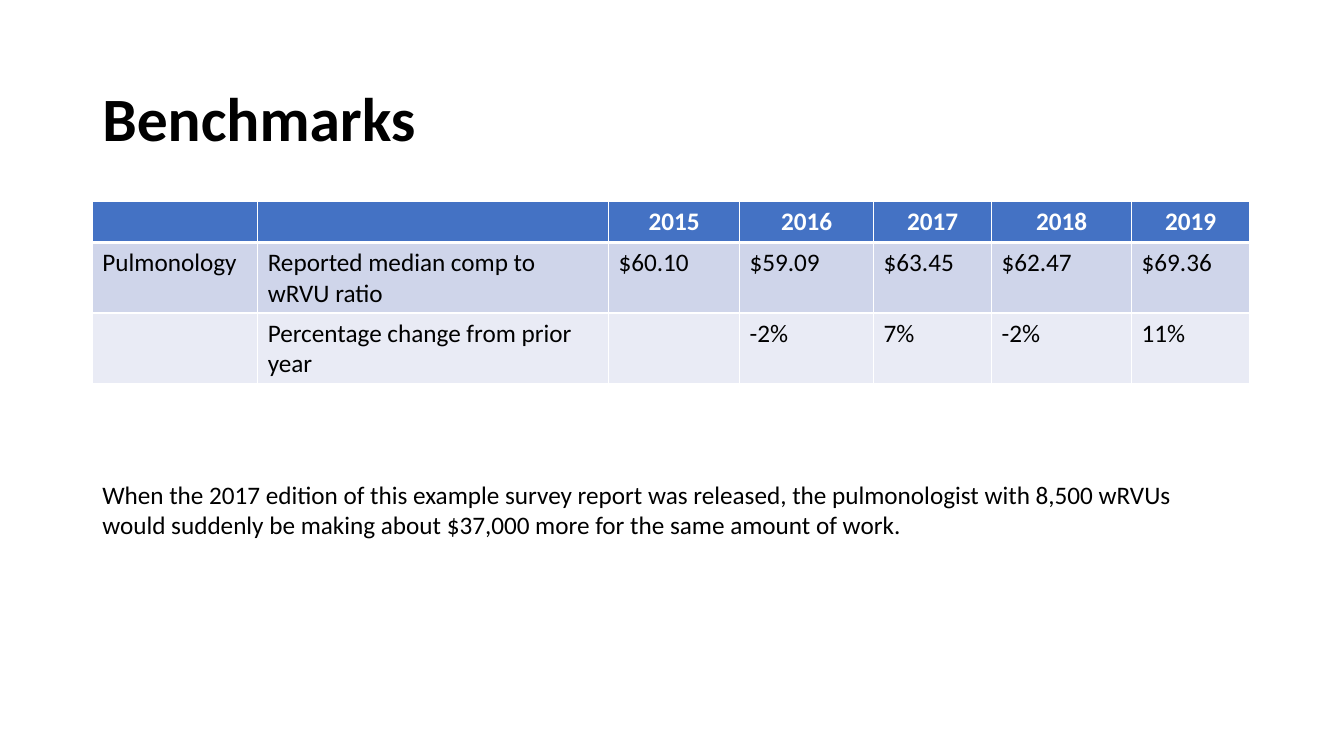
from lxml.etree import SubElement
from pptx import Presentation
from pptx.dml.color import RGBColor
from pptx.enum.text import MSO_ANCHOR, PP_ALIGN
from pptx.oxml.ns import qn
from pptx.util import Pt

TITLE = "Benchmarks"
NOTE = ("When the 2017 edition of this example survey report was released, the pulmonologist "
        "with 8,500 wRVUs would suddenly be making about $37,000 more for the same amount of work.")
ROWS = [
    ["", "", "2015", "2016", "2017", "2018", "2019"],
    ["Pulmonology", "Reported median comp to wRVU ratio",
     "$60.10", "$59.09", "$63.45", "$62.47", "$69.36"],
    ["", "Percentage change from prior year", "", "-2%", "7%", "-2%", "11%"],
]
COLUMN_WIDTHS = [118.1, 250.6, 93.6, 95.8, 84.2, 100.1, 84.2]
ROW_HEIGHTS = [29.2, 50.4, 50.4]
ROW_FILLS = ["4472C4", "CFD5EA", "E9EBF5"]
LEFT = 66

TITLE_FORMAT = {"name": "Calibri", "size": Pt(44), "bold": True}
BODY_FORMAT = {"name": "Calibri", "size": Pt(18), "bold": False}
HEADER_FORMAT = {**BODY_FORMAT, "bold": True}


def color(value):
    return RGBColor.from_string(value)


def write(para, text, font_format, text_color="000000"):
    para.text = text
    for name, value in font_format.items():
        setattr(para.font, name, value)
    para.font.color.rgb = color(text_color)


def add_text(slide, place, text, font_format):
    box = slide.shapes.add_textbox(*map(Pt, place))
    box.text_frame.word_wrap = True
    write(box.text_frame.paragraphs[0], text, font_format)
    return box


def set_borders(cell, widths):
    """Draw white cell borders, placed before the fill as the schema requires."""
    properties = cell._tc.get_or_add_tcPr()
    for position, (side, width) in enumerate(widths.items()):
        line = SubElement(properties, qn(f"a:ln{side}"), w=str(Pt(width)))
        fill = SubElement(line, qn("a:solidFill"))
        SubElement(fill, qn("a:srgbClr"), val="FFFFFF")
        properties.insert(position, line)


def add_benchmark_table(slide):
    frame = slide.shapes.add_table(len(ROWS), len(COLUMN_WIDTHS), Pt(LEFT), Pt(144),
                                   Pt(sum(COLUMN_WIDTHS)), Pt(sum(ROW_HEIGHTS)))
    table = frame.table
    for column, width in zip(table.columns, COLUMN_WIDTHS):
        column.width = Pt(width)
    for row, height in zip(table.rows, ROW_HEIGHTS):
        row.height = Pt(height)
    for row_index, texts in enumerate(ROWS):
        is_header = row_index == 0
        for column_index, text in enumerate(texts):
            cell = table.cell(row_index, column_index)
            cell.fill.solid()
            cell.fill.fore_color.rgb = color(ROW_FILLS[row_index])
            set_borders(cell, {"L": 1, "R": 1, "T": 3 if row_index == 1 else 1,
                               "B": 3 if is_header else 1})
            para = cell.text_frame.paragraphs[0]
            if is_header:
                para.alignment = PP_ALIGN.CENTER
                write(para, text, HEADER_FORMAT, "FFFFFF")
            else:
                write(para, text, BODY_FORMAT)


def main():
    deck = Presentation()
    deck.slide_width, deck.slide_height = Pt(960), Pt(540)
    slide = deck.slides.add_slide(deck.slide_layouts[6])
    title = add_text(slide, (LEFT, 41, 828, 92), TITLE, TITLE_FORMAT)
    title.text_frame.vertical_anchor = MSO_ANCHOR.MIDDLE
    title.text_frame.paragraphs[0].line_spacing = 0.9
    add_benchmark_table(slide)
    add_text(slide, (LEFT, 339, 806.4, 51), NOTE, BODY_FORMAT)
    deck.save("out.pptx")


if __name__ == "__main__":
    main()
